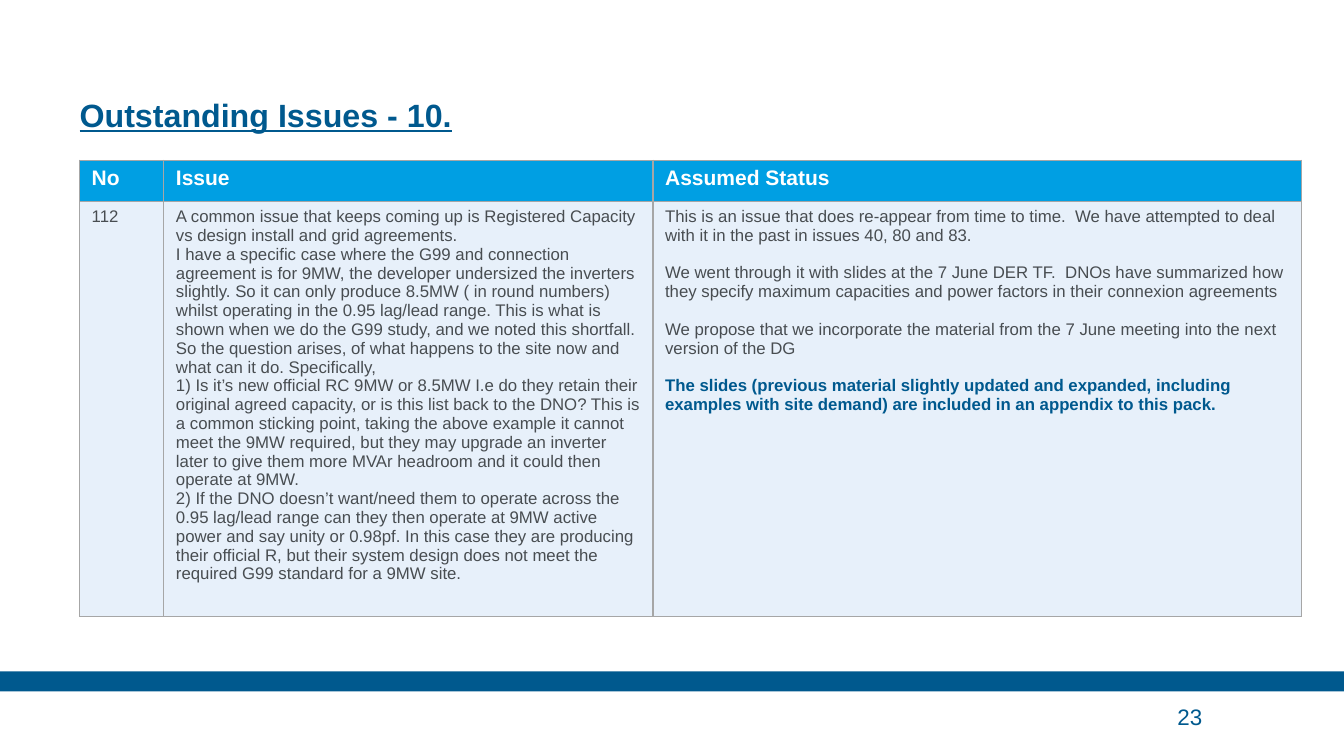
from lxml.etree import SubElement
from pptx import Presentation
from pptx.dml.color import RGBColor as Rgb
from pptx.enum.shapes import MSO_SHAPE as Shape
from pptx.enum.text import MSO_ANCHOR as Anchor
from pptx.oxml.ns import qn
from pptx.util import Pt

FONT = "Arial"
COLORS = {"navy": "00598E", "sky": "009FE3", "pale": "E7F0FA",
          "grey": "484D51", "rule": "A6A6A6", "white": "FFFFFF"}

TITLE = "Outstanding Issues - 10."
PAGE = "23"
HEADS = ["No", "Issue", "Assumed Status"]
ISSUE = [
    "A common issue that keeps coming up is Registered Capacity vs design install and grid agreements.",
    "I have a specific case where the G99 and connection agreement is for 9MW, the developer undersized "
    "the inverters slightly. So it can only produce 8.5MW ( in round numbers) whilst operating in the "
    "0.95 lag/lead range. This is what is shown when we do the G99 study, and we noted this shortfall.",
    "So the question arises, of what happens to the site now and what can it do. Specifically,",
    "1) Is it’s new official RC 9MW or 8.5MW I.e do they retain their original agreed capacity, or is "
    "this list back to the DNO? This is a common sticking point, taking the above example it cannot meet "
    "the 9MW required, but they may upgrade an inverter later to give them more MVAr headroom and it "
    "could then operate at 9MW.",
    "2) If the DNO doesn’t want/need them to operate across the 0.95 lag/lead range can they then operate "
    "at 9MW active power and say unity or 0.98pf. In this case they are producing their official R, but "
    "their system design does not meet the required G99 standard for a 9MW site.",
]
STATUS = [
    "This is an issue that does re-appear from time to time.  We have attempted to deal with it in the "
    "past in issues 40, 80 and 83.",
    "We went through it with slides at the 7 June DER TF.  DNOs have summarized how they specify maximum "
    "capacities and power factors in their connexion agreements",
    "We propose that we incorporate the material from the 7 June meeting into the next version of the DG",
    "The slides (previous material slightly updated and expanded, including examples with site demand) "
    "are included in an appendix to this pack.",
]

WIDE, HIGH = 960, 540
LEFT, TOP = 56.9, 114.5
COLS = [60.2, 349.4, 463]
ROWS = [29.3, 277]
PAD_X, PAD_Y = 8.64, 4.32
GAP = 13.4  # one line of body text


def color(name):
    return Rgb.from_string(COLORS[name])


def write(frame, lines, size, tint, bold=False, gap=0):
    """Fill a text frame, one paragraph a line, with a gap between them."""
    frame.text = "\n".join(lines)
    for i, para in enumerate(frame.paragraphs):
        if i and gap:
            para.space_before = Pt(gap)
        for run in para.runs:
            font = run.font
            font.name, font.size, font.bold = FONT, Pt(size), bold
            font.color.rgb = color(tint)


def add_text(slide, box, text, size, anchor, bold=False):
    frame = slide.shapes.add_textbox(*map(Pt, box)).text_frame
    frame.word_wrap = True
    frame.vertical_anchor = anchor
    frame.margin_left = frame.margin_right = 0
    frame.margin_top = frame.margin_bottom = 0
    write(frame, [text], size, "navy", bold)
    return frame.paragraphs[0]


def style(cell, fill):
    """Set the margins, four borders and fill of a cell."""
    cell.margin_left = cell.margin_right = Pt(PAD_X)
    cell.margin_top = cell.margin_bottom = Pt(PAD_Y)
    props = cell._tc.get_or_add_tcPr()
    for side in "LRTB":
        line = SubElement(props, qn(f"a:ln{side}"), w=str(Pt(1)))
        solid = SubElement(line, qn("a:solidFill"))
        SubElement(solid, qn("a:srgbClr"), val=COLORS["rule"])
    cell.fill.solid()
    cell.fill.fore_color.rgb = color(fill)


def add_issues(slide):
    box = map(Pt, (LEFT, TOP, sum(COLS), sum(ROWS)))
    table = slide.shapes.add_table(len(ROWS), len(COLS), *box).table
    for col, width in zip(table.columns, COLS):
        col.width = Pt(width)
    for row, height in zip(table.rows, ROWS):
        row.height = Pt(height)
    bodies = [(["112"], 0), (ISSUE, 0), (STATUS, GAP)]
    for i, (head, (lines, gap)) in enumerate(zip(HEADS, bodies)):
        top, body = table.cell(0, i), table.cell(1, i)
        style(top, "sky")
        write(top.text_frame, [head], 15, "white", True)
        style(body, "pale")
        write(body.text_frame, lines, 12, "grey", gap=gap)
    final = table.cell(1, 2).text_frame.paragraphs[-1].runs[0].font
    final.bold = True
    final.color.rgb = color("navy")


def main():
    deck = Presentation()
    deck.slide_width, deck.slide_height = Pt(WIDE), Pt(HIGH)
    slide = deck.slides.add_slide(deck.slide_layouts[6])

    band = slide.shapes.add_shape(Shape.RECTANGLE, 0, Pt(479.5), Pt(WIDE), Pt(14.4))
    band.shadow.inherit = False
    band.fill.solid()
    band.fill.fore_color.rgb = color("navy")
    band.line.fill.background()

    title = add_text(slide, (LEFT, 22.3, 708.5, 73.4), TITLE, 23, Anchor.BOTTOM, True)
    title.line_spacing = Pt(30)
    title.runs[0].font.underline = True
    add_text(slide, (841, 497.5, 88.6, 28.1), PAGE, 16, Anchor.MIDDLE)
    add_issues(slide)
    deck.save("out.pptx")


if __name__ == "__main__":
    main()
